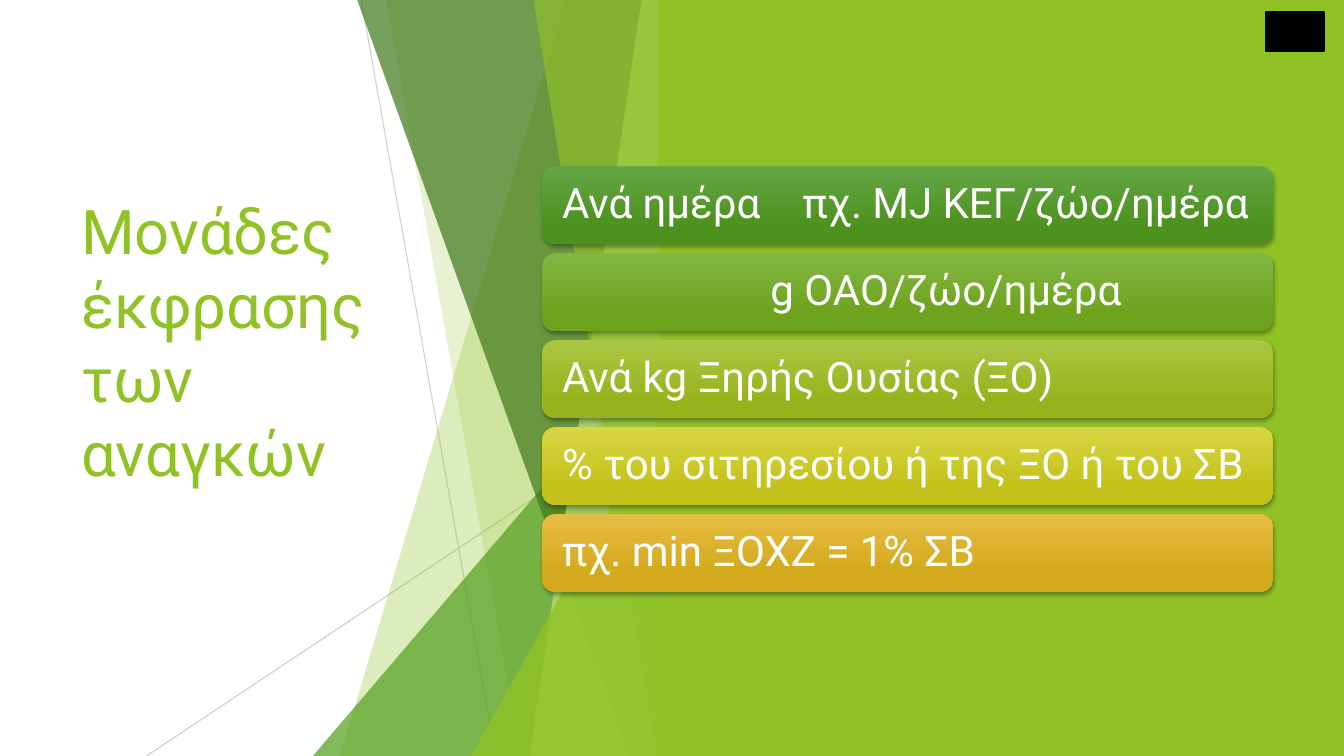
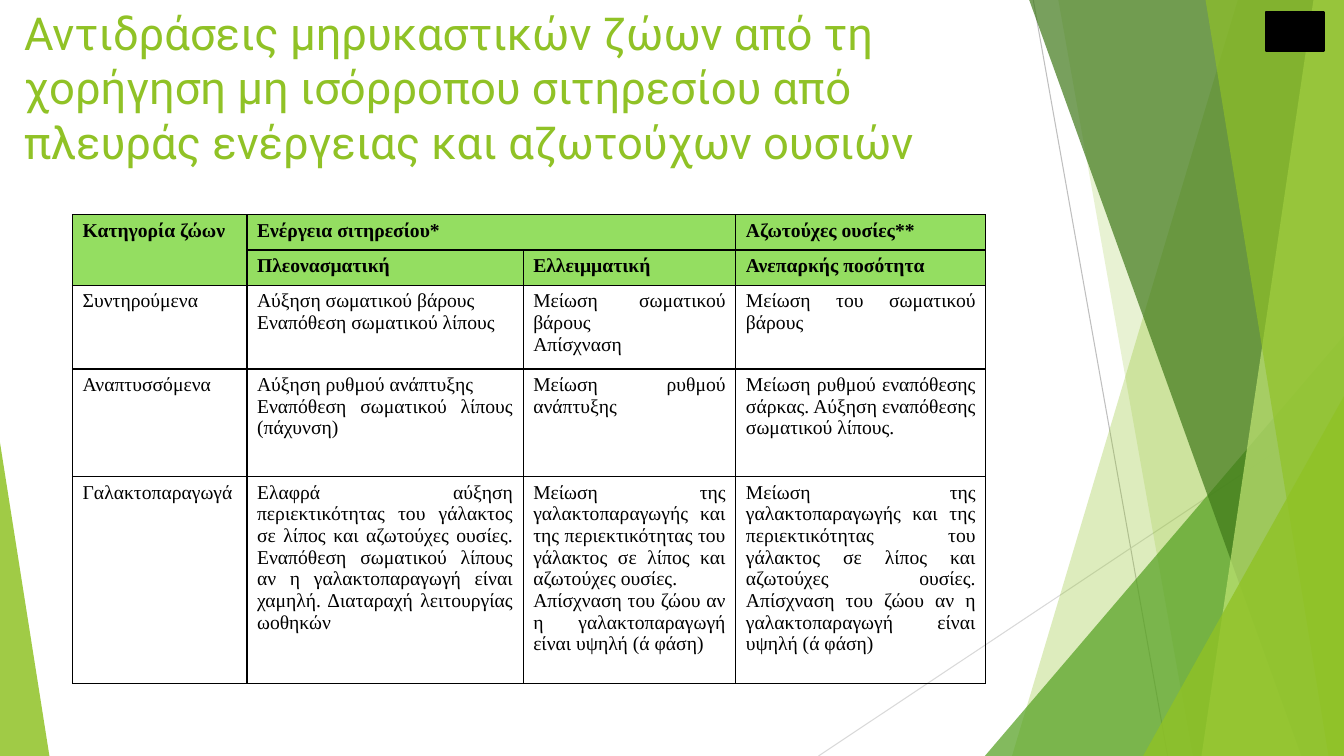
from dataclasses import dataclass

from pptx import Presentation
from pptx.dml.color import RGBColor
from pptx.enum.shapes import MSO_CONNECTOR, MSO_SHAPE
from pptx.enum.text import MSO_ANCHOR, PP_ALIGN
from pptx.oxml.ns import qn
from pptx.oxml.xmlchemy import OxmlElement
from pptx.util import Emu, Inches, Pt

# Shared look; lengths are percentages of the slide's width or height
W, H = Inches(13.333), Inches(7.5)
LIME, GREEN, FOREST, PALE = "90C226", "54A021", "3F7819", "C0E474"
BLACK, WHITE, HEADER = "000000", "FFFFFF", "94DE61"
GREY, LIGHT_GREY = "BFBFBF", "D9D9D9"
SANS, SERIF = "Roboto", "Times New Roman"


@dataclass(frozen=True)
class Ray:
    """Band reaching the right edge, slanted on its left side."""
    top: float
    foot: float
    fill: str
    alpha: int


@dataclass(frozen=True)
class Wedge:
    """Right-angled triangle in the lower right corner."""
    left: float
    top: float
    fill: str
    alpha: int


@dataclass(frozen=True)
class Hairline:
    x1: float
    y1: float
    x2: float
    y2: float


@dataclass(frozen=True)
class Card:
    text: str
    light: str
    dark: str
    indent: float = 0
    tab: float = 0


HAIRLINES = (Hairline(76.88, 0, 86.88, 100), Hairline(100, 53.73, 60.9, 100))
FACETS = (
    Ray(92.1, 75.3, LIME, 30),
    Ray(78.75, 88.75, LIME, 20),
    Wedge(73.28, 44.4, GREEN, 72),
    Ray(76.58, 96.83, FOREST, 70),
    Ray(97.73, 89.4, PALE, 70),
    Ray(89.7, 98.85, LIME, 65),
    Wedge(85.05, 52.4, LIME, 80),
)
CARDS = (
    Card("Ανά ημέρα\tπχ. MJ ΚΕΓ/ζώο/ημέρα", "63A545", "4D921E", tab=17.9),
    Card("g OAO/ζώο/ημέρα", "82B644", "6EA31D", indent=15.5),
    Card("Ανά kg Ξηρής Ουσίας (ΞΟ)", "AAC744", "97B31C"),
    Card("% του σιτηρεσίου ή της ΞΟ ή του ΣΒ", "D8D543", "C4C11A"),
    Card("πχ. min ΞΟΧΖ = 1% ΣΒ", "E7BC43", "D2A91B"),
)
CARD_TOP, CARD_HEIGHT, CARD_PITCH = 22, 10.27, 11.5

TABLE_COLS = (12.98, 20.55, 15.83, 18.6)
TABLE_ROWS = (4.67, 4.67, 11.07, 14.27, 27.33)
HEADER_ROWS = 2
TABLE_TEXT = (
    ("Κατηγορία ζώων", "Ενέργεια σιτηρεσίου*", None, "Αζωτούχες ουσίες**"),
    (None, "Πλεονασματική", "Ελλειμματική", "Ανεπαρκής ποσότητα"),
    ("Συντηρούμενα",
     "Αύξηση σωματικού βάρους\nΕναπόθεση σωματικού λίπους",
     "Μείωση σωματικού βάρους\nΑπίσχναση",
     "Μείωση του σωματικού βάρους"),
    ("Αναπτυσσόμενα",
     "Αύξηση ρυθμού ανάπτυξης\nΕναπόθεση σωματικού λίπους (πάχυνση)",
     "Μείωση ρυθμού ανάπτυξης",
     "Μείωση ρυθμού εναπόθεσης σάρκας. Αύξηση εναπόθεσης σωματικού λίπους."),
    ("Γαλακτοπαραγωγά",
     "Ελαφρά αύξηση περιεκτικότητας του γάλακτος σε λίπος και αζωτούχες "
     "ουσίες. Εναπόθεση σωματικού λίπους αν η γαλακτοπαραγωγή είναι χαμηλή. "
     "Διαταραχή λειτουργίας ωοθηκών",
     "Μείωση της γαλακτοπαραγωγής και της περιεκτικότητας του γάλακτος σε "
     "λίπος και αζωτούχες ουσίες.\n"
     "Απίσχναση του ζώου αν η γαλακτοπαραγωγή είναι υψηλή (ά φάση)",
     "Μείωση της γαλακτοπαραγωγής και της περιεκτικότητας του γάλακτος σε "
     "λίπος και αζωτούχες ουσίες. "
     "Απίσχναση του ζώου αν η γαλακτοπαραγωγή είναι υψηλή (ά φάση)"),
)


# Helpers
def across(share: float) -> Emu:
    return Emu(round(W * share / 100))


def down(share: float) -> Emu:
    return Emu(round(H * share / 100))


def box(left: float, top: float, width: float, height: float) -> tuple:
    return across(left), down(top), across(width), down(height)


def rgb(color: str) -> RGBColor:
    return RGBColor.from_string(color)


def add_child(parent, tag: str, **attrs):
    child = OxmlElement(tag)
    for name, value in attrs.items():
        child.set(name, str(value))
    parent.append(child)
    return child


def set_alpha(sp, alpha: int) -> None:
    color = sp.element.spPr.find(".//" + qn("a:srgbClr"))
    add_child(color, "a:alpha", val=alpha * 1000)


def paint(sp, fill: str, alpha: int = 100) -> None:
    sp.shadow.inherit = False
    sp.line.fill.background()
    sp.fill.solid()
    sp.fill.fore_color.rgb = rgb(fill)
    if alpha < 100:
        set_alpha(sp, alpha)


def format_text(tf, font: str, size: float, color: str, bold: bool = False,
                align: PP_ALIGN = PP_ALIGN.LEFT) -> None:
    for p in tf.paragraphs:
        p.alignment = align
        for r in p.runs:
            r.font.name, r.font.size, r.font.bold = font, Pt(size), bold
            r.font.color.rgb = rgb(color)


# Shared parts
def add_facets(s, shift: float, lines: tuple) -> None:
    """Draw the facets; lines holds a colour and an alpha per hairline."""
    for hair, (color, alpha) in zip(HAIRLINES, lines):
        line = s.shapes.add_connector(
            MSO_CONNECTOR.STRAIGHT, across(hair.x1 - shift), down(hair.y1),
            across(hair.x2 - shift), down(hair.y2))
        line.line.width = Pt(0.75)
        line.line.color.rgb = rgb(color)
        if alpha < 100:
            set_alpha(line, alpha)
        add_child(line.element.spPr, "a:effectLst")
    edge = 100 - shift
    for facet in FACETS:
        if isinstance(facet, Ray):
            fb = s.shapes.build_freeform(across(facet.top - shift), 0, scale=1.0)
            fb.add_line_segments([(across(edge), 0), (across(edge), H),
                                  (across(facet.foot - shift), H)])
            sp = fb.convert_to_shape()
        else:
            sp = s.shapes.add_shape(
                MSO_SHAPE.ISOSCELES_TRIANGLE,
                *box(facet.left - shift, facet.top,
                     100 - facet.left, 100 - facet.top))
            sp.adjustments[0] = 1
        paint(sp, facet.fill, facet.alpha)


def add_title(s, text: str, place: tuple, size: float, anchor: MSO_ANCHOR) -> None:
    tf = s.shapes.add_textbox(*box(*place)).text_frame
    tf.word_wrap = True
    tf.vertical_anchor = anchor
    tf.text = text
    format_text(tf, SANS, size, LIME)


def add_corner_box(s) -> None:
    sp = s.shapes.add_shape(MSO_SHAPE.RECTANGLE, *box(94.2, 1.6, 4.28, 5.2))
    paint(sp, BLACK)
    sp.line.color.rgb = rgb(BLACK)
    sp.line.width = Pt(1.5)


# Cards
def add_card(s, card: Card, top: float) -> None:
    sp = s.shapes.add_shape(MSO_SHAPE.ROUNDED_RECTANGLE,
                            *box(40.35, top, 54.38, CARD_HEIGHT))
    sp.line.fill.background()
    sp.fill.gradient()
    sp.fill.gradient_angle = 270
    stops = zip(sp.fill.gradient_stops, (card.light, card.dark), (0, 0.78))
    for stop, color, position in stops:
        stop.color.rgb = rgb(color)
        stop.position = position
    sp.shadow.inherit = False
    shadow = add_child(sp.element.spPr.find(qn("a:effectLst")), "a:outerShdw",
                       blurRad=Pt(3), dist=Pt(2), dir=5400000, rotWithShape=0)
    add_child(add_child(shadow, "a:srgbClr", val=BLACK), "a:alpha", val=35000)

    tf = sp.text_frame
    tf.word_wrap = True
    tf.vertical_anchor = MSO_ANCHOR.MIDDLE
    tf.margin_left = tf.margin_right = across(1.2)
    tf.text = card.text
    format_text(tf, SANS, 30, WHITE)
    p = tf.paragraphs[0]
    p.line_spacing = 0.9
    pPr = p._p.get_or_add_pPr()
    if card.indent:
        pPr.set("marL", str(across(card.indent)))
    if card.tab:
        add_child(add_child(pPr, "a:tabLst"), "a:tab", pos=across(card.tab), algn="l")


# Table
def add_borders(cell) -> None:
    tcPr = cell._tc.get_or_add_tcPr()
    for side in ("a:lnL", "a:lnR", "a:lnT", "a:lnB"):
        ln = add_child(tcPr, side, w=Pt(1))
        add_child(add_child(ln, "a:solidFill"), "a:srgbClr", val=BLACK)


def add_reactions_table(s) -> None:
    table = s.shapes.add_table(
        len(TABLE_ROWS), len(TABLE_COLS),
        *box(5.4, 28.4, sum(TABLE_COLS), sum(TABLE_ROWS))).table
    table.first_row = table.horz_banding = False
    for column, share in zip(table.columns, TABLE_COLS):
        column.width = across(share)
    for row, share in zip(table.rows, TABLE_ROWS):
        row.height = down(share)
    for i, texts in enumerate(TABLE_TEXT):
        is_header = i < HEADER_ROWS
        for j, text in enumerate(texts):
            cell = table.cell(i, j)
            add_borders(cell)
            if is_header:
                cell.fill.solid()
                cell.fill.fore_color.rgb = rgb(HEADER)
            else:
                cell.fill.background()
            if text:
                cell.text_frame.text = text
                format_text(cell.text_frame, SERIF, 14, BLACK, is_header,
                            PP_ALIGN.JUSTIFY)
    table.cell(0, 0).merge(table.cell(1, 0))
    table.cell(0, 1).merge(table.cell(0, 2))


# Slides
def build_units_slide(s) -> None:
    add_title(s, "Μονάδες έκφρασης των αναγκών", (5.3, 15.2, 25.5, 59.7), 44,
              MSO_ANCHOR.MIDDLE)
    add_facets(s, 50, ((GREY, 75), (GREY, 80)))
    panel = s.shapes.add_shape(MSO_SHAPE.RECTANGLE, *box(49.05, 0, 50.95, 100))
    paint(panel, LIME)
    add_corner_box(s)
    for i, card in enumerate(CARDS):
        add_card(s, card, CARD_TOP + i * CARD_PITCH)


def build_reactions_slide(s) -> None:
    add_facets(s, 0, ((GREY, 100), (LIGHT_GREY, 100)))
    corner = s.shapes.add_shape(MSO_SHAPE.ISOSCELES_TRIANGLE,
                                *box(0, 58.53, 3.68, 41.47))
    corner.adjustments[0] = 0
    paint(corner, LIME, 85)
    add_title(s, "Αντιδράσεις μηρυκαστικών ζώων από τη χορήγηση μη ισόρροπου "
              "σιτηρεσίου από πλευράς ενέργειας και αζωτούχων ουσιών",
              (1.05, 0, 75, 19.2), 32.4, MSO_ANCHOR.TOP)
    add_reactions_table(s)
    add_corner_box(s)


def main() -> None:
    prs = Presentation()
    prs.slide_width, prs.slide_height = W, H
    for build in (build_units_slide, build_reactions_slide):
        build(prs.slides.add_slide(prs.slide_layouts[6]))
    prs.save("out.pptx")


if __name__ == "__main__":
    main()
